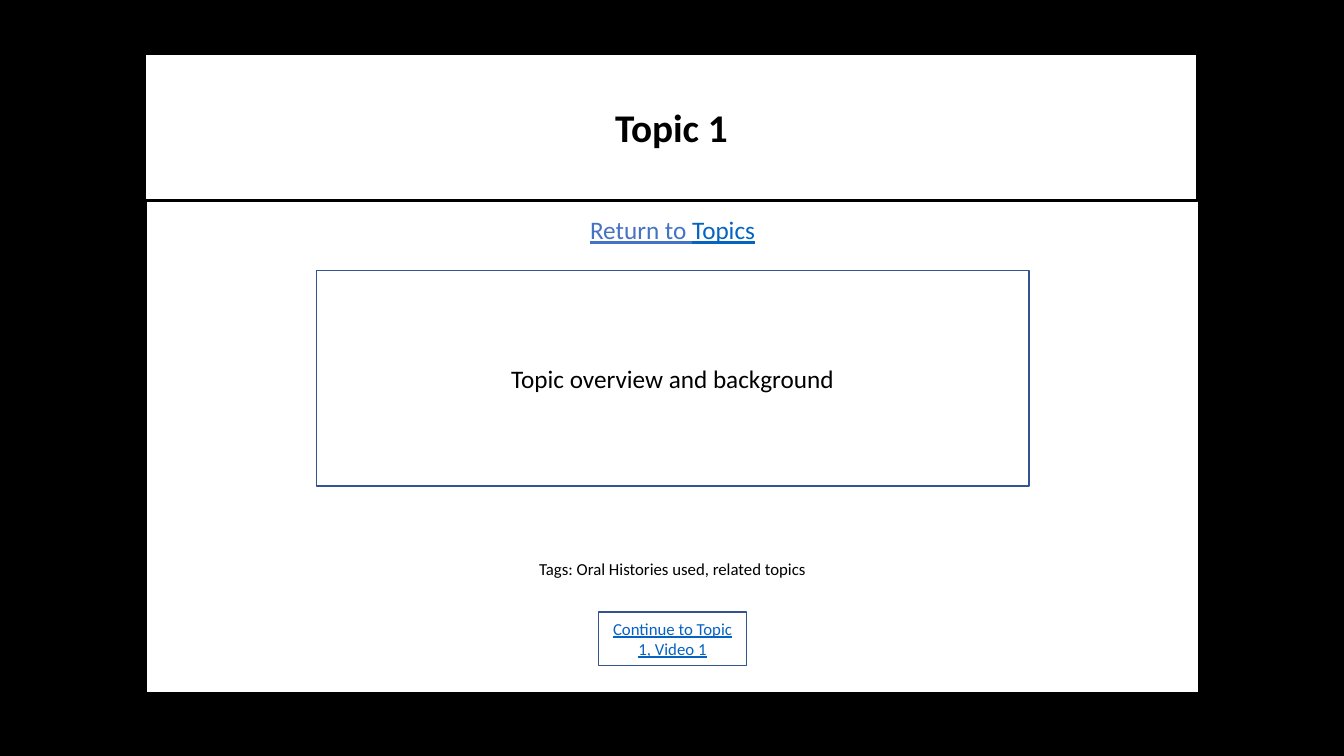
from pptx import Presentation
from pptx.dml.color import RGBColor
from pptx.enum.shapes import MSO_SHAPE as Shape
from pptx.enum.text import MSO_ANCHOR as Anchor, PP_ALIGN as Align
from pptx.util import Cm, Pt

BLACK, WHITE = "000000", "FFFFFF"
BORDER, LINK, ACCENT = "325491", "0563C1", "4472C4"


def color(value):
    """Turn a hex string into a colour."""
    return RGBColor.from_string(value)


def add_box(slide, left, top, width, height, line=None, weight=1):
    """Add a white rectangle, measured in centimetres."""
    shape = slide.shapes.add_shape(
        Shape.RECTANGLE, Cm(left), Cm(top), Cm(width), Cm(height))
    shape.shadow.inherit = False
    shape.fill.solid()
    shape.fill.fore_color.rgb = color(WHITE)
    if line:
        shape.line.color.rgb = color(line)
        shape.line.width = Pt(weight)
    else:
        shape.line.fill.background()
    return shape


def add_text(shape, text, size=18, ink=BLACK, bold=False, underline=False):
    """Append a run to the centred paragraph of a shape."""
    frame = shape.text_frame
    frame.word_wrap = True
    frame.vertical_anchor = Anchor.MIDDLE
    paragraph = frame.paragraphs[0]
    paragraph.alignment = Align.CENTER
    run = paragraph.add_run()
    run.text = text
    run.font.name = "Calibri"
    run.font.size = Pt(size)
    run.font.bold = bold
    run.font.underline = underline
    run.font.color.rgb = color(ink)


def add_header(slide, left, top, width, height):
    """Draw the title band."""
    header = add_box(slide, left, top, width, height, line=BLACK, weight=2.25)
    add_text(header, "Topic 1", size=28, bold=True)


def add_body(slide, left, top, width):
    """Draw the centred links, overview and tags below the title band."""
    def centred(offset, box_width, box_height, line=None):
        """Add a box centred across the body."""
        return add_box(slide, left + (width - box_width) / 2, top + offset,
                       box_width, box_height, line=line)

    next_link = centred(10.36, 3.73, 1.35, line=BORDER)
    add_text(next_link, "Continue to Topic 1, Video 1", size=12, ink=LINK, underline=True)

    overview = centred(1.75, 17.96, 5.44, line=BORDER)
    add_text(overview, "Topic overview and background")

    return_link = centred(0.45, 18.34, 0.56, line=WHITE)
    add_text(return_link, "Return to ", ink=ACCENT, underline=True)
    add_text(return_link, "Topics", ink=LINK, underline=True)

    tags = centred(8.48, 17.96, 1.6)
    add_text(tags, "Tags: Oral Histories used, related topics", size=12)


def add_topic_slide(presentation, left, top, width, height):
    """Build a topic slide inside the given panel."""
    slide = presentation.slides.add_slide(presentation.slide_layouts[6])
    slide.background.fill.solid()
    slide.background.fill.fore_color.rgb = color(BLACK)
    add_box(slide, left, top, width, height, line=BLACK)
    header_height = 3.71
    add_header(slide, left - 0.03, top, width, header_height)
    add_body(slide, left, top + header_height, width)


def main():
    """Create and save the presentation."""
    presentation = Presentation()
    presentation.slide_width = Cm(33.87)
    presentation.slide_height = Cm(19.05)
    add_topic_slide(presentation, 3.68, 1.35, 26.54, 16.1)
    presentation.save("out.pptx")


if __name__ == "__main__":
    main()
